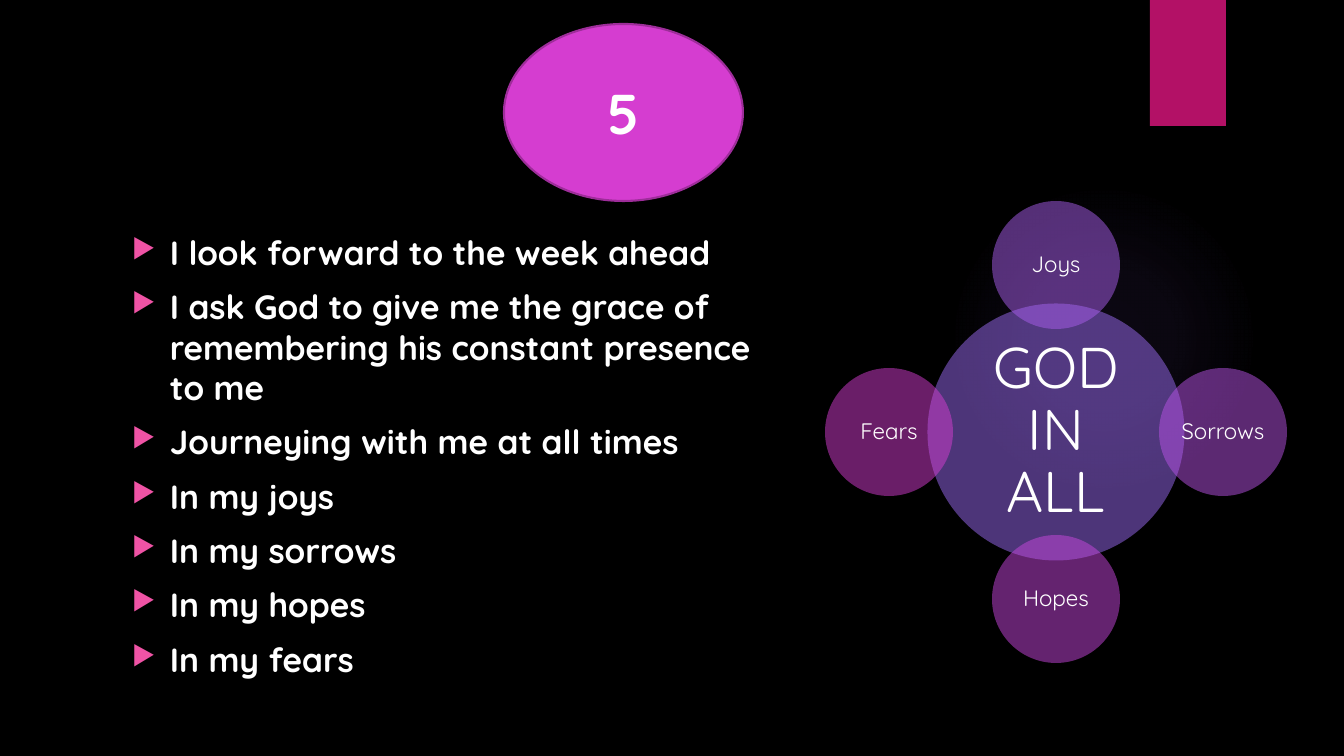
from pptx import Presentation
from pptx.dml.color import RGBColor
from pptx.enum.shapes import MSO_SHAPE as Shape
from pptx.enum.text import MSO_ANCHOR as Anchor, PP_ALIGN as Align
from pptx.oxml import parse_xml
from pptx.oxml.ns import nsdecls, qn
from pptx.util import Emu, Pt

EMU_PER_PX = 914400 / 100.8
FONT = "Quicksand"
BLACK = RGBColor(0x00, 0x00, 0x00)
WHITE = RGBColor(0xFF, 0xFF, 0xFF)
CRIMSON = RGBColor(0xB3, 0x11, 0x66)
BULLET_PINK = RGBColor(0xEF, 0x53, 0xA5)
MAGENTA = RGBColor(0xD5, 0x3D, 0xD0)
PLUM = RGBColor(0x9E, 0x2D, 0x9A)
VIOLET = RGBColor(0x9B, 0x6B, 0xF2)
LAVENDER = RGBColor(0xA9, 0x5E, 0xEC)
ORCHID = RGBColor(0xB8, 0x52, 0xE5)
FUCHSIA = RGBColor(0xC9, 0x47, 0xDE)

REFLECTIONS = [
    "I look forward to the week ahead",
    "I ask God to give me the grace of remembering his constant presence to me",
    "Journeying with me at all times",
    "In my joys",
    "In my sorrows",
    "In my hopes",
    "In my fears",
]
# Label, colour and direction from the hub
SATELLITES = [
    ("Joys", LAVENDER, (0, -1)),
    ("Sorrows", ORCHID, (1, 0)),
    ("Hopes", FUCHSIA, (0, 1)),
    ("Fears", MAGENTA, (-1, 0)),
]
HUB_CENTER = (1056, 432)
HUB_SIZE = 257
SATELLITE_SIZE = 128
ORBIT = 167


def px(length):
    return Emu(round(length * EMU_PER_PX))


def add_filled(slide, kind, left, top, width, height, color, alpha=None):
    """Add an unlined shape; alpha is its opacity in percent."""
    shape = slide.shapes.add_shape(kind, px(left), px(top), px(width), px(height))
    shape.shadow.inherit = False
    shape.fill.solid()
    shape.fill.fore_color.rgb = color
    shape.line.fill.background()
    if alpha is not None:
        swatch = next(shape.element.spPr.iter(qn("a:srgbClr")))
        swatch.append(parse_xml(f'<a:alpha {nsdecls("a")} val="{alpha * 1000}"/>'))
    return shape


def add_bullet(paragraph, indent):
    properties = paragraph._p.get_or_add_pPr()
    properties.set("marL", str(px(indent)))
    properties.set("indent", str(-px(indent)))
    for tag in (
        f'<a:buClr {nsdecls("a")}><a:srgbClr val="{BULLET_PINK}"/></a:buClr>',
        f'<a:buSzPct {nsdecls("a")} val="80000"/>',
        f'<a:buChar {nsdecls("a")} char="▶"/>',
    ):
        properties.append(parse_xml(tag))


def write(shape, lines, size, bold=False, align=Align.CENTER, anchor=Anchor.MIDDLE,
          inset=None, line_spacing=None, gap=0, bullet_indent=None):
    frame = shape.text_frame
    frame.word_wrap = True
    frame.vertical_anchor = anchor
    if inset is not None:
        frame.margin_left = frame.margin_right = px(inset)
        frame.margin_top = frame.margin_bottom = px(inset)
    for index, line in enumerate(lines):
        paragraph = frame.add_paragraph() if index else frame.paragraphs[0]
        paragraph.alignment = align
        if line_spacing:
            paragraph.line_spacing = line_spacing
        if index and gap:
            paragraph.space_before = Pt(gap)
        if bullet_indent:
            add_bullet(paragraph, bullet_indent)
        run = paragraph.add_run()
        run.text = line
        run.font.name = FONT
        run.font.size = Pt(size)
        run.font.bold = bold
        run.font.color.rgb = WHITE


def add_glow(slide):
    glow = add_filled(slide, Shape.OVAL, 949, 184, 310, 310, VIOLET)
    stops = "".join(
        f'<a:gs pos="{position * 1000}"><a:srgbClr val="{VIOLET}">'
        f'<a:alpha val="{alpha * 1000}"/></a:srgbClr></a:gs>'
        for position, alpha in ((0, 7), (36, 6), (69, 0), (100, 0))
    )
    gradient = parse_xml(
        f'<a:gradFill {nsdecls("a")}><a:gsLst>{stops}</a:gsLst><a:path path="circle">'
        '<a:fillToRect l="50000" t="50000" r="50000" b="50000"/></a:path></a:gradFill>'
    )
    properties = glow.element.spPr
    properties.replace(properties.find(qn("a:solidFill")), gradient)


def add_disc(slide, center, diameter, color, label, size, inset):
    left, top = (middle - diameter / 2 for middle in center)
    disc = add_filled(slide, Shape.OVAL, left, top, diameter, diameter, color, alpha=50)
    write(disc, [label], size, inset=inset, line_spacing=0.9)


def add_radial_diagram(slide):
    add_disc(slide, HUB_CENTER, HUB_SIZE, VIOLET, "GOD IN ALL", 41, inset=12)
    for label, color, direction in SATELLITES:
        center = [hub + ORBIT * step for hub, step in zip(HUB_CENTER, direction)]
        add_disc(slide, center, SATELLITE_SIZE, color, label, 16, inset=0)


def add_reflections(slide):
    body = slide.shapes.add_textbox(px(122), px(227), px(643), px(463))
    write(body, REFLECTIONS, 24, bold=True, align=Align.LEFT, anchor=Anchor.TOP,
          gap=10, bullet_indent=38)


def add_step_number(slide):
    step = add_filled(slide, Shape.FLOWCHART_CONNECTOR, 504, 24, 239, 177, MAGENTA)
    step.line.color.rgb = PLUM
    step.line.width = Pt(1.5)
    write(step, ["5"], 40, bold=True)


def main():
    deck = Presentation()
    deck.slide_width, deck.slide_height = px(1344), px(756)
    slide = deck.slides.add_slide(deck.slide_layouts[6])
    slide.background.fill.solid()
    slide.background.fill.fore_color.rgb = BLACK
    add_glow(slide)
    add_filled(slide, Shape.RECTANGLE, 1150, 0, 76, 126, CRIMSON)
    add_reflections(slide)
    add_radial_diagram(slide)
    add_step_number(slide)
    deck.save("out.pptx")


if __name__ == "__main__":
    main()
